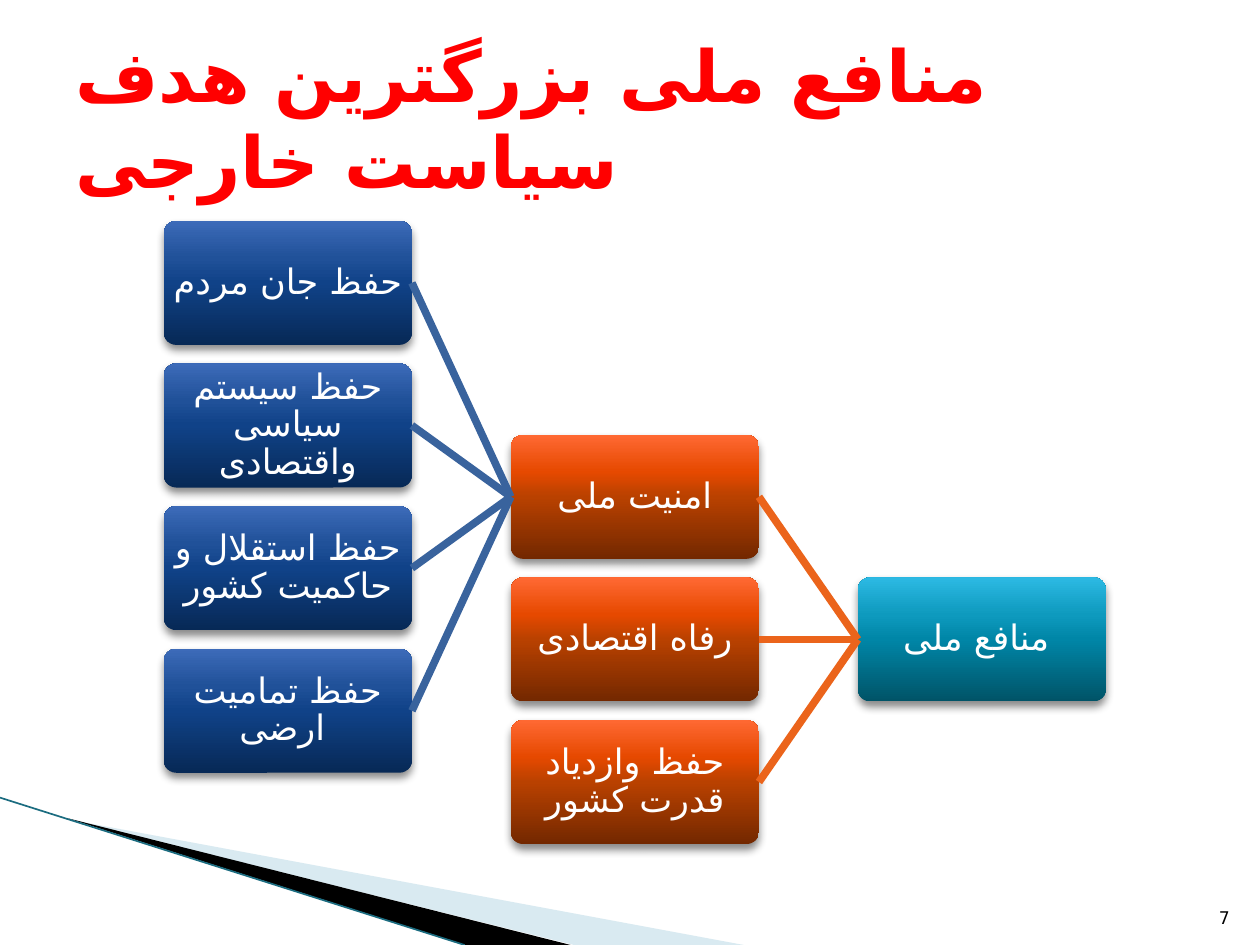
"""Build a slide with a right-to-left tree of national interests."""
from lxml.etree import SubElement
from pptx import Presentation
from pptx.dml.color import RGBColor
from pptx.enum.shapes import MSO_CONNECTOR, MSO_SHAPE
from pptx.enum.text import MSO_ANCHOR, PP_ALIGN
from pptx.oxml.ns import qn
from pptx.util import Pt

FONT = "DejaVu Sans Mono"
ARABIC_FONT = "DejaVu Sans"
TITLE = "منافع ملی بزرگترین هدف سیاست خارجی"
SLIDE_NUMBER = "7"

LEVELS = [
    {"first_row": 2.5, "line": None,
     "gradient": [(0, "005367"), (50, "0086A7"), (70, "0E9ABE"), (100, "2CB9E3")],
     "labels": ["منافع ملی "]},
    {"first_row": 1.5, "line": "EB641B",
     "gradient": [(0, "732800"), (50, "B94100"), (70, "E64900"), (100, "FF6933")],
     "labels": ["امنیت ملی", "رفاه اقتصادی", "حفظ وازدیاد قدرت کشور"]},
    {"first_row": 0, "line": "39639D",
     "gradient": [(0, "072956"), (50, "104288"), (70, "205199"), (100, "3D6BB9")],
     "labels": ["حفظ جان مردم", "حفظ سیستم سیاسی واقتصادی",
                "حفظ استقلال و حاکمیت کشور", "حفظ تمامیت ارضی "]},
]

WEDGES = [
    ("A0CBDC", 40, [(39.6, 468.4), (425, 540), (328, 540)]),
    ("000000", 100, [(38.2, 467.5), (326, 540), (266, 540)]),
]
EDGE = ((0, 455.8), (265.5, 540))

ROOT_LEFT, TREE_TOP = 490.2, 126.2
COLUMN_STEP, ROW_STEP = 198.3, 81.5
BOX_WIDTH, BOX_HEIGHT = 141.8, 70.9


def color(value):
    return RGBColor.from_string(value)


def add_element(parent, tag, **attributes):
    values = {name: str(value) for name, value in attributes.items()}
    return SubElement(parent, qn(tag), values)


def write(shape, text, size, text_color, anchor, alignment, bold=False):
    frame = shape.text_frame
    frame.word_wrap = True
    frame.vertical_anchor = anchor
    paragraph = frame.paragraphs[0]
    paragraph.alignment = alignment
    run = paragraph.add_run()
    run.text = text
    run.font.size = Pt(size)
    run.font.bold = bold
    run.font.name = FONT
    run.font.color.rgb = color(text_color)
    add_element(run.font._element, "a:cs", typeface=ARABIC_FONT)
    return paragraph


def add_text_box(slide, left, top, width, height, *text_options):
    box = slide.shapes.add_textbox(Pt(left), Pt(top), Pt(width), Pt(height))
    return write(box, *text_options)


def add_wedge(slide, fill_color, opacity, points):
    corners = [(Pt(x), Pt(y)) for x, y in points]
    builder = slide.shapes.build_freeform(*corners[0], scale=1.0)
    builder.add_line_segments(corners[1:], close=True)
    shape = builder.convert_to_shape()
    shape.shadow.inherit = False
    shape.line.fill.background()
    shape.fill.solid()
    shape.fill.fore_color.rgb = color(fill_color)
    if opacity < 100:
        fill = shape._element.spPr.find(qn("a:solidFill"))
        add_element(fill[0], "a:alpha", val=opacity * 1000)


def add_line(slide, start, end, line_color, width):
    line = slide.shapes.add_connector(
        MSO_CONNECTOR.STRAIGHT, *[Pt(value) for value in start + end])
    line.line.color.rgb = color(line_color)
    line.line.width = Pt(width)
    add_element(line._element.spPr, "a:effectLst")
    return line


def style_box(shape, gradient):
    shape.line.fill.background()
    shape.shadow.inherit = False
    shape.fill.gradient()
    shape.fill.gradient_angle = 90
    properties = shape._element.spPr
    stops = properties.find(qn("a:gradFill")).find(qn("a:gsLst"))
    for stop in list(stops):
        stops.remove(stop)
    for position, stop_color in gradient:
        stop = add_element(stops, "a:gs", pos=position * 1000)
        add_element(stop, "a:srgbClr", val=stop_color)
    properties.find(qn("a:gradFill")).find(qn("a:lin")).set("ang", "16200000")
    shadow = add_element(properties.find(qn("a:effectLst")), "a:outerShdw",
                         blurRad=Pt(5), dist=Pt(3), dir=5400000, rotWithShape=0)
    shadow_color = add_element(shadow, "a:srgbClr", val="000000")
    add_element(shadow_color, "a:alpha", val=45000)


def add_box(slide, label, column, row, gradient):
    shape = slide.shapes.add_shape(
        MSO_SHAPE.ROUNDED_RECTANGLE,
        Pt(ROOT_LEFT - column * COLUMN_STEP), Pt(TREE_TOP + row * ROW_STEP),
        Pt(BOX_WIDTH), Pt(BOX_HEIGHT))
    shape.adjustments[0] = 0.1
    style_box(shape, gradient)
    frame = shape.text_frame
    frame.margin_left = frame.margin_right = Pt(1)
    frame.margin_top = frame.margin_bottom = Pt(1)
    paragraph = write(shape, label, 20, "FFFFFF", MSO_ANCHOR.MIDDLE, PP_ALIGN.CENTER)
    paragraph.line_spacing = 0.9
    return shape


def add_tree(slide):
    parent = None
    for column, level in enumerate(LEVELS):
        boxes = [add_box(slide, label, column, level["first_row"] + index, level["gradient"])
                 for index, label in enumerate(level["labels"])]
        if parent is not None:
            for box in boxes:
                branch = add_line(slide, (0, 0), (0, 0), level["line"], 4.33)
                branch.begin_connect(parent, 1)
                branch.end_connect(box, 3)
        parent = boxes[0]


def main():
    presentation = Presentation()
    presentation.slide_width, presentation.slide_height = Pt(720), Pt(540)
    slide = presentation.slides.add_slide(presentation.slide_layouts[6])
    for wedge in WEDGES:
        add_wedge(slide, *wedge)
    add_line(slide, *EDGE, "1B6C80", 0.95)
    add_tree(slide)
    title = add_text_box(slide, 36, 21.6, 648, 90, TITLE, 41, "FF0000",
                         MSO_ANCHOR.MIDDLE, PP_ALIGN.LEFT, True)
    title._p.get_or_add_pPr().set("rtl", "1")
    add_text_box(slide, 681, 505, 28.8, 28.8, SLIDE_NUMBER, 10, "000000",
                 MSO_ANCHOR.BOTTOM, PP_ALIGN.RIGHT)
    presentation.save("out.pptx")


if __name__ == "__main__":
    main()
